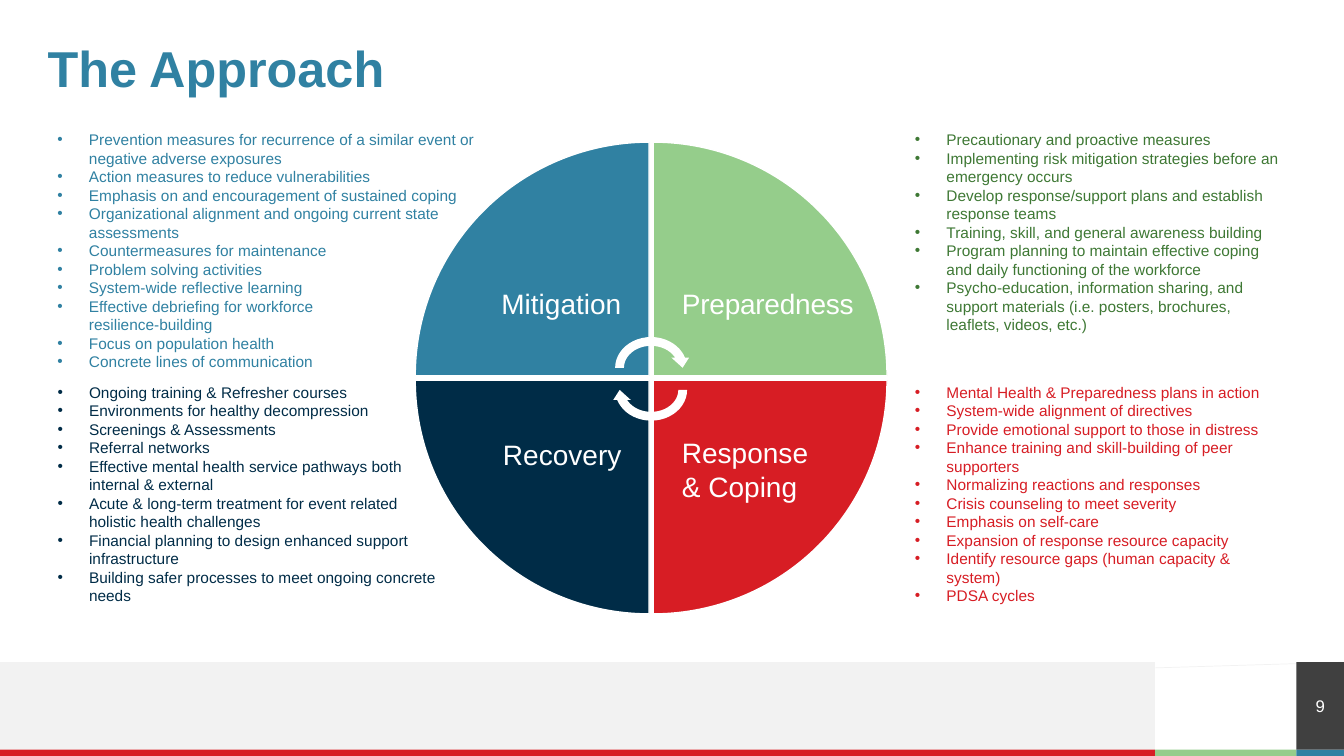
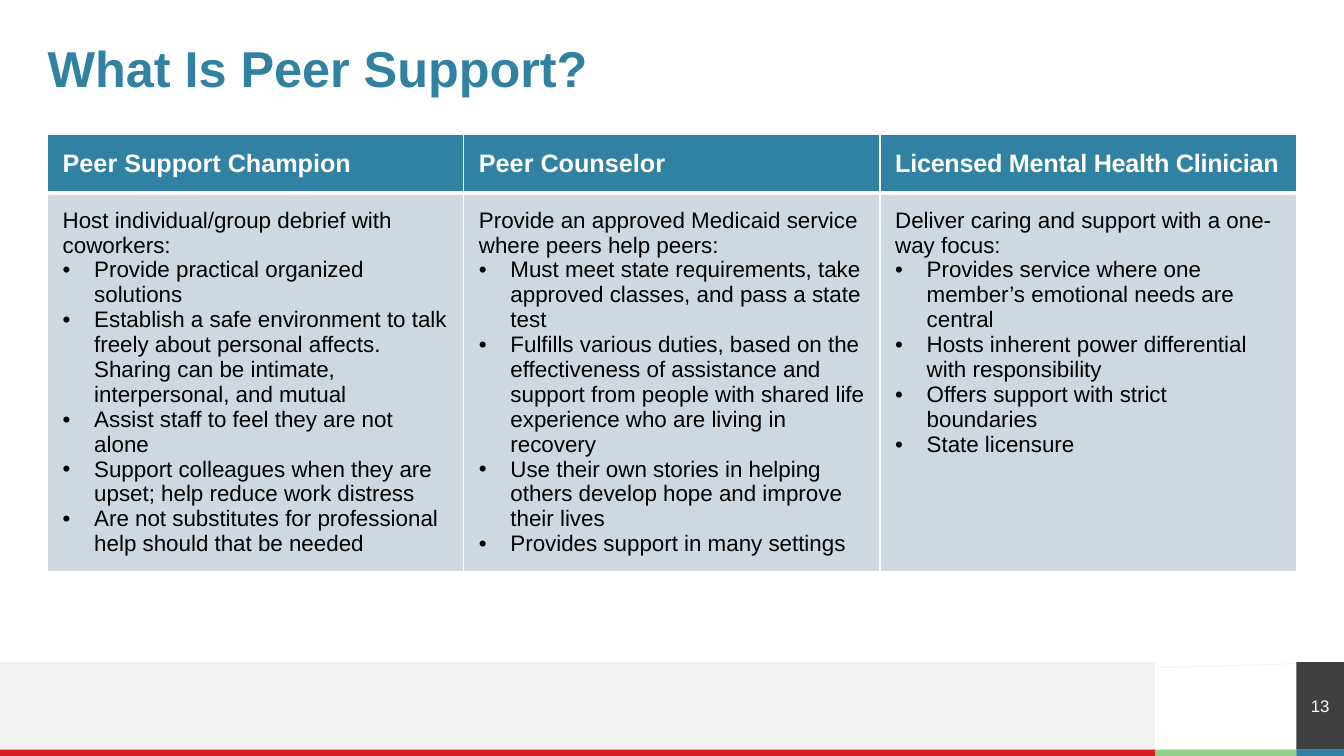
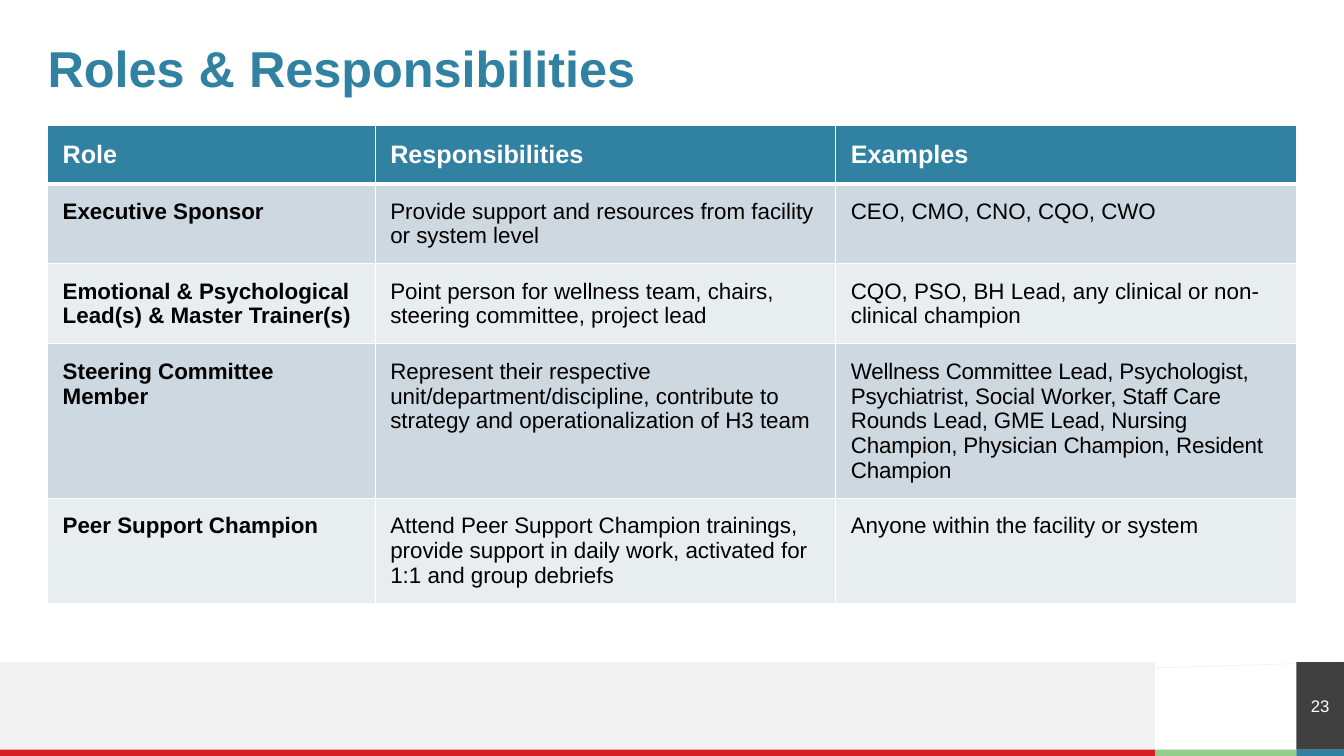
from dataclasses import dataclass
from itertools import product

from lxml import etree
from pptx import Presentation
from pptx.dml.color import RGBColor
from pptx.enum import shapes, text
from pptx.oxml import ns
from pptx.util import Pt


@dataclass(frozen=True)
class Theme:
    font: str = "Arial"
    blue: str = "3081A2"
    green: str = "95CD8B"
    dark_green: str = "3E7834"
    red: str = "D71D24"
    navy: str = "002C47"
    charcoal: str = "404040"
    band: str = "F2F2F2"
    row_dark: str = "CDD8E0"
    row_light: str = "E8EDF0"
    white: str = "FFFFFF"
    black: str = "000000"
    title_size: int = 36
    label_size: int = 20
    header_size: int = 18
    cell_size: int = 16
    number_size: int = 12
    list_size: int = 11


THEME = Theme()
WIDTH, HEIGHT = 960, 540
MARGIN = 34
CONTENT_WIDTH = WIDTH - 2 * MARGIN
INDENT = 22.5
CELL_INSET = 10.8

BAND_TOP, STRIP_TOP = 473, 535.5
LOGO_LEFT, NUMBER_LEFT = 825, WIDTH - MARGIN
BANDS = [  # left, top, right, bottom, colour
    (LOGO_LEFT, STRIP_TOP, NUMBER_LEFT, HEIGHT, THEME.green),
    (0, BAND_TOP, LOGO_LEFT, STRIP_TOP, THEME.band),
    (0, STRIP_TOP, LOGO_LEFT, HEIGHT, THEME.red),
    (NUMBER_LEFT, STRIP_TOP, WIDTH, HEIGHT, THEME.blue),
]

WHEEL_LEFT, WHEEL_TOP, WEDGE, WEDGE_PITCH = 296.6, 101.5, 167, 170
WEDGES = [THEME.blue, THEME.green, THEME.red, THEME.navy]  # clockwise
ARROWS = [(237.6, 0), (253.4, 180)]  # top, rotation

LABELS = [  # lines, box, alignment, wrap
    (["Mitigation"], (350, 201, 101, 32), text.PP_ALIGN.RIGHT, False),
    (["Preparedness"], (480, 201, 137.5, 32), text.PP_ALIGN.LEFT, False),
    (["Recovery"], (351, 309, 100, 32), text.PP_ALIGN.RIGHT, False),
    (["Response", "& Coping"], (480, 307.5, 110, 55.5), text.PP_ALIGN.LEFT, True),
]

PHASES = [  # colour, box, points
    (THEME.blue, (MARGIN, 89.5, 316, 181), [
        "Prevention measures for recurrence of a similar event or negative adverse exposures",
        "Action measures to reduce vulnerabilities",
        "Emphasis on and encouragement of sustained coping",
        "Organizational alignment and ongoing current state assessments",
        "Countermeasures for maintenance",
        "Problem solving activities",
        "System-wide reflective learning",
        "Effective debriefing for workforce \nresilience-building",
        "Focus on population health",
        "Concrete lines of communication",
    ]),
    (THEME.navy, (MARGIN, 270, 289, 167), [
        "Ongoing training & Refresher courses",
        "Environments for healthy decompression",
        "Screenings & Assessments",
        "Referral networks",
        "Effective mental health service pathways both internal & external",
        "Acute & long-term treatment for event related holistic health challenges",
        "Financial planning to design enhanced support infrastructure",
        "Building safer processes to meet ongoing concrete needs",
    ]),
    (THEME.dark_green, (646.5, 89.5, 279.5, 154), [
        "Precautionary and proactive measures",
        "Implementing risk mitigation strategies before an emergency occurs",
        "Develop response/support plans and establish response teams",
        "Training, skill, and general awareness building",
        "Program planning to maintain effective coping and daily functioning of the workforce",
        "Psycho-education, information sharing, and support materials "
        "(i.e. posters, brochures, leaflets, videos, etc.)",
    ]),
    (THEME.red, (646.5, 270, 279.5, 167), [
        "Mental Health & Preparedness plans in action",
        "System-wide alignment of directives",
        "Provide emotional support to those in distress",
        "Enhance training and skill-building of peer supporters",
        "Normalizing reactions and responses",
        "Crisis counseling to meet severity",
        "Emphasis on self-care",
        "Expansion of response resource capacity",
        "Identify resource gaps (human capacity & system)",
        "PDSA cycles",
    ]),
]

# In each table cell the first line is plain and any further lines are bulleted.
PEER_SUPPORT = [
    [["Peer Support Champion"], ["Peer Counselor"], ["Licensed Mental Health Clinician"]],
    [
        [
            "Host individual/group debrief with coworkers:",
            "Provide practical organized solutions",
            "Establish a safe environment to talk freely about personal affects. "
            "Sharing can be intimate, interpersonal, and mutual",
            "Assist staff to feel they are not alone",
            "Support colleagues when they are upset; help reduce work distress",
            "Are not substitutes for professional help should that be needed",
        ],
        [
            "Provide an approved Medicaid service where peers help peers:",
            "Must meet state requirements, take approved classes, and pass a state test",
            "Fulfills various duties, based on the effectiveness of assistance and "
            "support from people with shared life experience who are living in recovery",
            "Use their own stories in helping others develop hope and improve their lives",
            "Provides support in many settings",
        ],
        [
            "Deliver caring and support with a one-way focus:",
            "Provides service where one member’s emotional needs are central",
            "Hosts inherent power differential with responsibility",
            "Offers support with strict boundaries",
            "State licensure",
        ],
    ],
]

COMMITTEE_EXAMPLES = (
    "Wellness Committee Lead, Psychologist, Psychiatrist, Social Worker, Staff Care "
    "Rounds Lead, GME Lead, Nursing Champion, Physician Champion, Resident Champion"
)
ROLES = [
    [["Role"], ["Responsibilities"], ["Examples"]],
    [["Executive Sponsor"],
     ["Provide support and resources from facility or system level"],
     ["CEO, CMO, CNO, CQO, CWO"]],
    [["Emotional & Psychological Lead(s) & Master Trainer(s)"],
     ["Point person for wellness team, chairs, steering committee, project lead"],
     ["CQO, PSO, BH Lead, any clinical or non-clinical champion"]],
    [["Steering Committee Member"],
     ["Represent their respective unit/department/discipline, contribute to strategy "
      "and operationalization of H3 team"],
     [COMMITTEE_EXAMPLES]],
    [["Peer Support Champion"],
     ["Attend Peer Support Champion trainings, provide support in daily work, "
      "activated for 1:1 and group debriefs"],
     ["Anyone within the facility or system"]],
]

# Letter spacing in hundredths of a point
TIGHT = {"Preparedness": -20, "Licensed Mental Health Clinician": -20, COMMITTEE_EXAMPLES: -10}


def rgb(color):
    return RGBColor.from_string(color)


def points(*lengths):
    return [Pt(length) for length in lengths]


def add_bullet(para, color):
    properties = para._p.get_or_add_pPr()
    properties.set("marL", str(Pt(INDENT)))
    properties.set("indent", str(-Pt(INDENT)))
    bullet_color = etree.SubElement(properties, ns.qn("a:buClr"))
    etree.SubElement(bullet_color, ns.qn("a:srgbClr")).set("val", color)
    etree.SubElement(properties, ns.qn("a:buFont")).set("typeface", THEME.font)
    etree.SubElement(properties, ns.qn("a:buChar")).set("char", "•")


def write(frame, lines, size, color, bold=False, align=text.PP_ALIGN.LEFT, bullets_from=None):
    """Fill the frame with one paragraph a line, bulleted from the given line on."""
    for index, line in enumerate(lines):
        para = frame.paragraphs[0] if index == 0 else frame.add_paragraph()
        para.text = line
        para.alignment = align
        if bullets_from is not None and index >= bullets_from:
            add_bullet(para, color)
        for span in para.runs:
            span.font.name = THEME.font
            span.font.size = Pt(size)
            span.font.bold = bold
            span.font.color.rgb = rgb(color)
            if line in TIGHT:
                span._r.get_or_add_rPr().set("spc", str(TIGHT[line]))


def clear_insets(frame):
    frame.margin_left = frame.margin_top = frame.margin_right = frame.margin_bottom = 0
    frame.vertical_anchor = text.MSO_ANCHOR.MIDDLE


def add_filled(page, kind, box, color, outline=None, rotation=0):
    shape = page.shapes.add_shape(kind, *points(*box))
    shape.shadow.inherit = False
    shape.fill.solid()
    shape.fill.fore_color.rgb = rgb(color)
    shape.rotation = rotation
    if outline:
        shape.line.color.rgb = rgb(outline)
        shape.line.width = Pt(1)
    else:
        shape.line.fill.background()
    return shape


def add_text(page, box, lines, size, color, wrap=True, **style):
    frame = page.shapes.add_textbox(*points(*box)).text_frame
    frame.word_wrap = wrap
    frame.auto_size = text.MSO_AUTO_SIZE.SHAPE_TO_FIT_TEXT
    write(frame, lines, size, color, **style)


def prepare_layout(layout, page):
    """Give the layout its title place and bands; the bands are drawn on page, then moved."""
    for holder in list(layout.placeholders):
        if holder.placeholder_format.type != shapes.PP_PLACEHOLDER.TITLE:
            holder.element.getparent().remove(holder.element)
            continue
        holder.left, holder.top, holder.width, holder.height = points(
            MARGIN, MARGIN, CONTENT_WIDTH, MARGIN)
        clear_insets(holder.text_frame)
        holder.text_frame.auto_size = text.MSO_AUTO_SIZE.NONE

    parts = [
        add_filled(page, shapes.MSO_SHAPE.RECTANGLE,
                   (left, top, right - left, bottom - top), color)
        for left, top, right, bottom, color in BANDS
    ]
    rule = page.shapes.add_connector(
        shapes.MSO_CONNECTOR.STRAIGHT, *points(WIDTH, BAND_TOP, 0, 502))
    rule.line.color.rgb = rgb(THEME.band)
    rule.line.width = Pt(0.5)
    etree.SubElement(rule.element.spPr, ns.qn("a:effectLst"))
    for number, part in enumerate(parts + [rule], start=20):
        part.element.xpath(".//p:cNvPr")[0].set("id", str(number))
        layout.shapes.element.append(part.element)


def finish_page(page, title, number):
    frame = page.shapes.title.text_frame
    write(frame, [title], THEME.title_size, THEME.blue, bold=True)
    frame.paragraphs[0].line_spacing = 0.9
    box = (NUMBER_LEFT, BAND_TOP, MARGIN, STRIP_TOP - BAND_TOP)
    frame = add_filled(page, shapes.MSO_SHAPE.RECTANGLE, box, THEME.charcoal).text_frame
    clear_insets(frame)
    write(frame, [str(number)], THEME.number_size, THEME.white, align=text.PP_ALIGN.CENTER)


def add_borders(cell, bottom):
    properties = cell._tc.get_or_add_tcPr()
    for side, width in (("lnL", 1), ("lnR", 1), ("lnT", 1), ("lnB", bottom)):
        line = etree.SubElement(properties, ns.qn(f"a:{side}"), w=str(Pt(width)))
        fill = etree.SubElement(line, ns.qn("a:solidFill"))
        etree.SubElement(fill, ns.qn("a:srgbClr")).set("val", THEME.white)


def add_grid(page, top, widths, heights, rows, bold_first=False):
    table = page.shapes.add_table(
        len(rows), len(widths), *points(MARGIN, top, sum(widths), sum(heights))).table
    for column, width in zip(table.columns, widths):
        column.width = Pt(width)
    for row, height in zip(table.rows, heights):
        row.height = Pt(height)
    for r, c in product(range(len(rows)), range(len(widths))):
        cell = table.cell(r, c)
        header = r == 0
        cell.margin_left = cell.margin_right = Pt(CELL_INSET)
        cell.margin_top = cell.margin_bottom = Pt(CELL_INSET)
        add_borders(cell, 3 if header else 1)
        cell.fill.solid()
        body_fill = THEME.row_dark if r % 2 else THEME.row_light
        cell.fill.fore_color.rgb = rgb(THEME.blue if header else body_fill)
        write(cell.text_frame, rows[r][c],
              THEME.header_size if header else THEME.cell_size,
              THEME.white if header else THEME.black,
              bold=header or (bold_first and c == 0), bullets_from=1)


def draw_approach(page):
    corners = [(0, 0), (1, 0), (1, 1), (0, 1)]
    for turn, ((column, row), color) in enumerate(zip(corners, WEDGES)):
        box = (WHEEL_LEFT + column * WEDGE_PITCH, WHEEL_TOP + row * WEDGE_PITCH, WEDGE, WEDGE)
        add_filled(page, shapes.MSO_SHAPE.PIE_WEDGE, box, color, THEME.white, 90 * turn)
    for top, rotation in ARROWS:
        add_filled(page, shapes.MSO_SHAPE.CIRCULAR_ARROW, (436.3, top, 57.6, 50.2),
                   THEME.white, rotation=rotation)
    for lines, box, align, wrap in LABELS:
        add_text(page, box, lines, THEME.label_size, THEME.white, wrap, align=align)
    for color, box, lines in PHASES:
        add_text(page, box, lines, THEME.list_size, color, bullets_from=0)


def draw_peer_support(page):
    add_grid(page, 96, [CONTENT_WIDTH / 3] * 3, [41, 270], PEER_SUPPORT)


def draw_roles(page):
    add_grid(page, 89.5, [234, 329, 329], [41, 57, 57, 110, 75], ROLES, bold_first=True)


PAGES = [
    ("The Approach", 9, draw_approach),
    ("What Is Peer Support?", 13, draw_peer_support),
    ("Roles & Responsibilities", 23, draw_roles),
]


def main():
    deck = Presentation()
    deck.slide_width, deck.slide_height = points(WIDTH, HEIGHT)
    layout = deck.slide_layouts.get_by_name("Title Only")
    for index, (title, number, draw) in enumerate(PAGES):
        page = deck.slides.add_slide(layout)
        if index == 0:
            prepare_layout(layout, page)
        draw(page)
        finish_page(page, title, number)
    deck.save("out.pptx")


if __name__ == "__main__":
    main()
